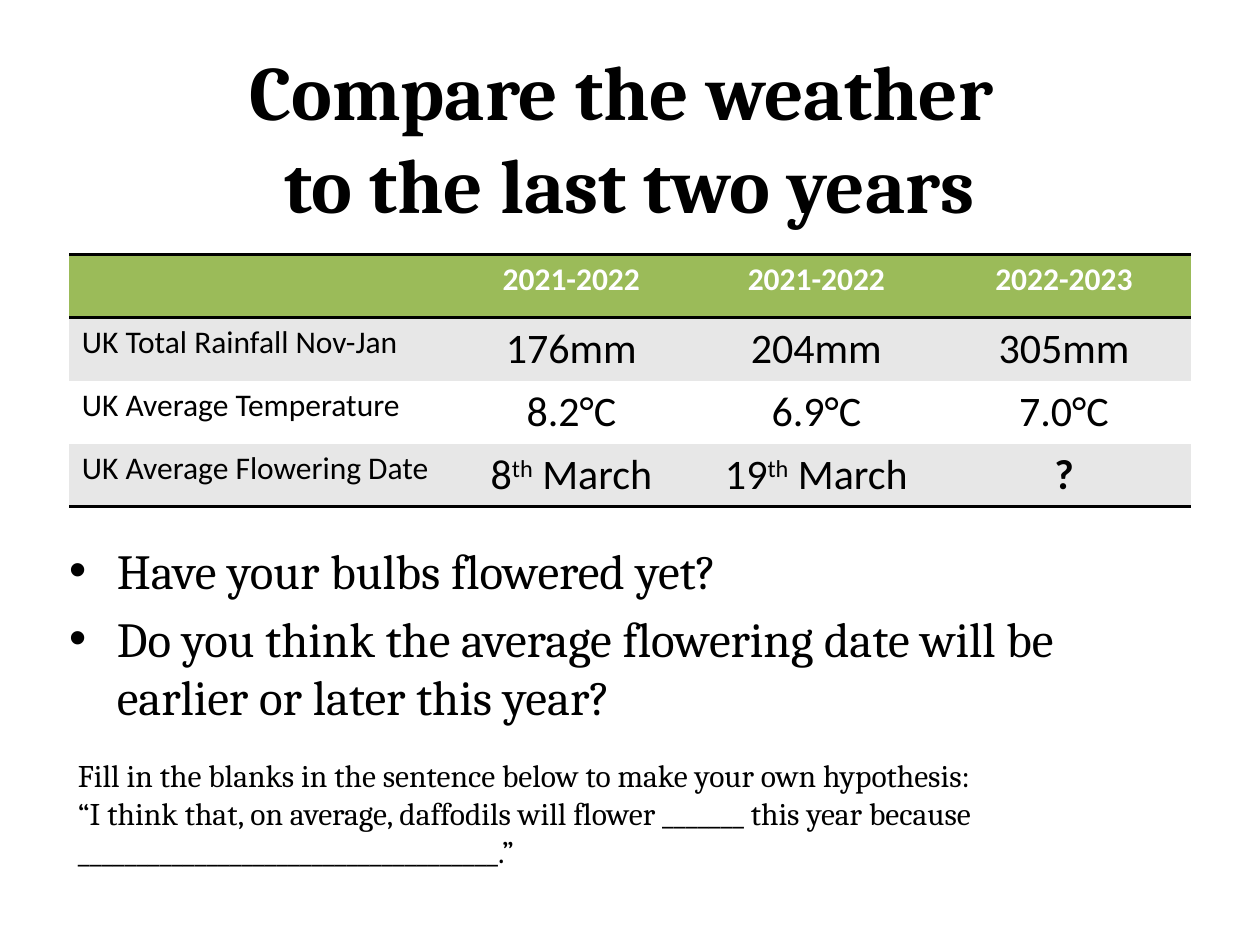
from dataclasses import dataclass

from lxml import etree
from pptx import Presentation
from pptx.dml.color import RGBColor
from pptx.enum.text import PP_ALIGN
from pptx.oxml.ns import qn
from pptx.util import Inches, Pt

LEFT, MID = PP_ALIGN.LEFT, PP_ALIGN.CENTER


@dataclass(frozen=True)
class Theme:
    ink: str = "000000"
    head: str = "9BBB59"
    band: str = "E7E7E7"
    plain: str = "FFFFFF"
    serif: str = "Cambria"
    sans: str = "Calibri"
    title: int = 44
    body: int = 28
    value: int = 24
    label: int = 18
    rule: int = 2


class Deck:
    """Builds slide elements in one shared style."""

    def __init__(self, theme):
        self.theme = theme
        self.prs = Presentation()
        self.prs.slide_width = Inches(10)
        self.prs.slide_height = Inches(7.5)
        self.slide = self.prs.slides.add_slide(self.prs.slide_layouts[6])

    def style(self, para, size, face, color=None, bold=False, align=LEFT):
        para.alignment = align
        for run in para.runs:
            font = run.font
            font.name, font.size, font.bold = face, Pt(size), bold
            font.color.rgb = RGBColor.from_string(color or self.theme.ink)

    def text(self, box, words, size, bold=False, align=LEFT):
        shape = self.slide.shapes.add_textbox(*map(Inches, box))
        frame = shape.text_frame
        frame.word_wrap = True
        frame.text = words
        for para in frame.paragraphs:
            self.style(para, size, self.theme.serif, bold=bold, align=align)
        return frame

    def bullets(self, box, words, size, indent, gap):
        frame = self.text(box, words, size)
        for i, para in enumerate(frame.paragraphs):
            props = para._p.get_or_add_pPr()
            props.set("marL", str(Inches(indent)))
            props.set("indent", str(-Inches(indent)))
            if i:
                para.space_before = Pt(gap)
            etree.SubElement(props, qn("a:buFont"), typeface="Arial")
            etree.SubElement(props, qn("a:buChar"), char="•")

    def edges(self, cell, shown):
        props = cell._tc.get_or_add_tcPr()
        for side in "LRTB":
            line = etree.SubElement(props, qn(f"a:ln{side}"))
            if side in shown:
                line.set("w", str(Pt(self.theme.rule)))
                fill = etree.SubElement(line, qn("a:solidFill"))
                etree.SubElement(fill, qn("a:srgbClr"), val=self.theme.ink)
            else:
                etree.SubElement(line, qn("a:noFill"))

    def cell(self, cell, words, fill, edges, **look):
        self.edges(cell, edges)
        cell.fill.solid()
        cell.fill.fore_color.rgb = RGBColor.from_string(fill)
        para = cell.text_frame.paragraphs[0]
        for i, part in enumerate(words.split("^")):
            run = para.add_run()
            run.text = part
            if i == 1:
                run._r.get_or_add_rPr().set("baseline", "30000")
        self.style(para, face=self.theme.sans, **look)

    def table(self, spot, widths, height, rows):
        t = self.theme
        size = sum(widths), height * len(rows)
        grid = self.slide.shapes.add_table(
            len(rows), len(widths), *map(Inches, (*spot, *size))).table
        grid.first_row = grid.horz_banding = False
        for col, width in zip(grid.columns, widths):
            col.width = Inches(width)
        edges = {0: "TB", 1: "T", len(rows) - 1: "B"}
        for r, row in enumerate(rows):
            grid.rows[r].height = Inches(height)
            fill = t.head if r == 0 else t.band if r % 2 else t.plain
            for c, words in enumerate(row):
                self.cell(
                    grid.cell(r, c), words, fill, edges.get(r, ""),
                    size=t.value if r and c else t.label,
                    color=t.ink if r else t.plain,
                    bold=r == 0 or words == "?",
                    align=MID if c else LEFT)


def main():
    theme = Theme()
    deck = Deck(theme)
    deck.text((0.5, 0.3, 9, 1.25),
              "Compare the weather \vto the last two years",
              theme.title, bold=True, align=MID)
    deck.bullets((0.45, 4.24, 9, 1.89),
                 "Have your bulbs flowered yet?\n"
                 "Do you think the average flowering date will be "
                 "earlier or later this year?",
                 theme.body, indent=0.38, gap=5)
    deck.text((0.52, 5.95, 8.89, 1.01),
              "Fill in the blanks in the sentence below to make your own "
              "hypothesis:\n“I think that, on average, daffodils will flower "
              "_______ this year because "
              "____________________________________.”",
              theme.label)
    deck.table((0.55, 2.02), (3, 1.97, 1.92, 2.01), 0.5, [
        ("", "2021-2022", "2021-2022", "2022-2023"),
        ("UK Total Rainfall Nov-Jan", "176mm", "204mm", "305mm"),
        ("UK Average Temperature", "8.2°C", "6.9°C", "7.0°C"),
        ("UK Average Flowering Date", "8^th^ March", "19^th^ March", "?"),
    ])
    deck.prs.save("out.pptx")


if __name__ == "__main__":
    main()
